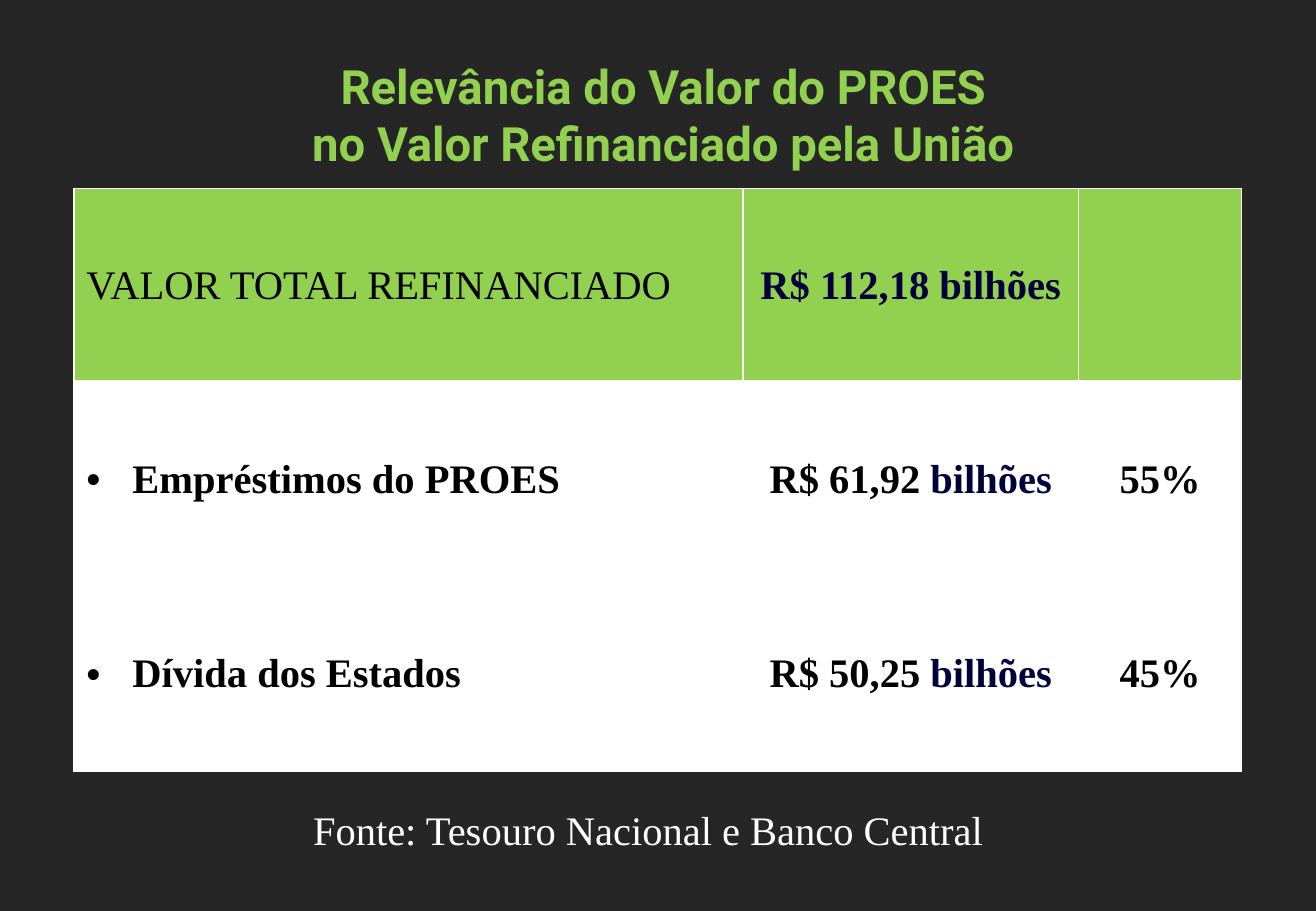
"""Build the slide on the weight of PROES in the refinanced total."""
import dataclasses

import lxml.etree
import pptx
import pptx.dml.color
import pptx.enum.text
import pptx.oxml.ns
import pptx.util

W, H = 10.83, 7.5
COLORS = {"dark": "262626", "green": "92D050", "white": "FFFFFF",
          "black": "000000", "navy": "00003D"}
SERIF = "Times New Roman"
COLUMN_SHARES = (0.573, 0.287, 0.14)
ROW_COUNT = 3
BULLET_INDENT = 0.38
CENTER = pptx.enum.text.PP_ALIGN.CENTER
LEFT = pptx.enum.text.PP_ALIGN.LEFT
MIDDLE = pptx.enum.text.MSO_ANCHOR.MIDDLE
qn = pptx.oxml.ns.qn


@dataclasses.dataclass(frozen=True)
class Box:
    """Area given as shares of the slide's size."""
    x: float
    y: float
    w: float
    h: float

    def lengths(self) -> tuple[int, ...]:
        return tuple(pptx.util.Inches(v) for v in
                     (self.x * W, self.y * H, self.w * W, self.h * H))


@dataclasses.dataclass(frozen=True)
class Run:
    """Text with one format."""
    text: str
    color: str = "black"
    bold: bool = True
    size: int = 24
    font: str = SERIF


@dataclasses.dataclass(frozen=True)
class Entry:
    """Contents of one table cell."""
    runs: tuple[Run, ...] = ()
    bullet: bool = False


TITLE = Box(0.0563, 0.056, 0.895, 0.139)
TABLE = Box(0.0563, 0.2067, 0.8873, 0.64)
SOURCE = Box(0.18, 0.8773, 0.625, 0.0667)
TITLE_LINES = ("Relevância do Valor do PROES", "no Valor Refinanciado pela União")


def share_row(label: str, value: str, share: str) -> tuple[Entry, ...]:
    return (Entry((Run(label),), bullet=True),
            Entry((Run(f"R$ {value} "), Run("bilhões", "navy"))),
            Entry((Run(share),)))


ROWS = (
    (Entry((Run("VALOR TOTAL REFINANCIADO", bold=False),)),
     Entry((Run("R$ 112,18 bilhões", "navy"),)),
     Entry()),
    share_row("Empréstimos do PROES", "61,92", "55%"),
    share_row("Dívida dos Estados", "50,25", "45%"),
)


def rgb(name: str) -> pptx.dml.color.RGBColor:
    return pptx.dml.color.RGBColor.from_string(COLORS[name])


def add_runs(p, runs: tuple[Run, ...], align) -> None:
    p.alignment = align
    for run in runs:
        r = p.add_run()
        r.text = run.text
        r.font.name = run.font
        r.font.size = pptx.util.Pt(run.size)
        r.font.bold = run.bold
        r.font.color.rgb = rgb(run.color)


def add_bullet(p) -> None:
    pPr = p._p.get_or_add_pPr()
    indent = pptx.util.Inches(BULLET_INDENT)
    pPr.set("marL", str(indent))
    pPr.set("indent", str(-indent))
    lxml.etree.SubElement(pPr, qn("a:buFont"), typeface="Arial")
    lxml.etree.SubElement(pPr, qn("a:buChar"), char="•")


def add_borders(cell, bottom: int) -> None:
    tcPr = cell._tc.get_or_add_tcPr()
    for side, width in (("L", 1), ("R", 1), ("T", 1), ("B", bottom)):
        ln = lxml.etree.SubElement(tcPr, qn(f"a:ln{side}"), w=str(pptx.util.Pt(width)))
        fill = lxml.etree.SubElement(ln, qn("a:solidFill"))
        lxml.etree.SubElement(fill, qn("a:srgbClr"), val=COLORS["white"])


def draw_title(s) -> None:
    sp = s.shapes.title
    sp.left, sp.top, sp.width, sp.height = TITLE.lengths()
    tf = sp.text_frame
    tf.word_wrap = True
    tf.auto_size = pptx.enum.text.MSO_AUTO_SIZE.NONE
    tf.vertical_anchor = pptx.enum.text.MSO_ANCHOR.TOP
    for i, line in enumerate(TITLE_LINES):
        p = tf.add_paragraph() if i else tf.paragraphs[0]
        add_runs(p, (Run(line, "green", size=28, font="Roboto"),), CENTER)


def draw_table(s) -> None:
    x, y, w, h = TABLE.lengths()
    table = s.shapes.add_table(ROW_COUNT, len(COLUMN_SHARES), x, y, w, h).table
    table.first_row = table.horz_banding = False
    for column, share in zip(table.columns, COLUMN_SHARES):
        column.width = int(w * share)
    for i, row in enumerate(ROWS):
        for j, entry in enumerate(row):
            cell = table.cell(i, j)
            add_borders(cell, bottom=1 if i else 3)
            cell.fill.solid()
            cell.fill.fore_color.rgb = rgb("white" if i else "green")
            cell.vertical_anchor = MIDDLE
            p = cell.text_frame.paragraphs[0]
            add_runs(p, entry.runs, CENTER if j else LEFT)
            if entry.bullet:
                add_bullet(p)


def draw_source(s) -> None:
    tf = s.shapes.add_textbox(*SOURCE.lengths()).text_frame
    tf.word_wrap = True
    add_runs(tf.paragraphs[0],
             (Run("Fonte: Tesouro Nacional e Banco Central", "white", bold=False),), CENTER)


def main() -> None:
    prs = pptx.Presentation()
    prs.slide_width, prs.slide_height = pptx.util.Inches(W), pptx.util.Inches(H)
    s = prs.slides.add_slide(prs.slide_layouts.get_by_name("Title Only"))
    s.background.fill.solid()
    s.background.fill.fore_color.rgb = rgb("dark")
    draw_title(s)
    draw_table(s)
    draw_source(s)
    prs.save("out.pptx")


if __name__ == "__main__":
    main()
